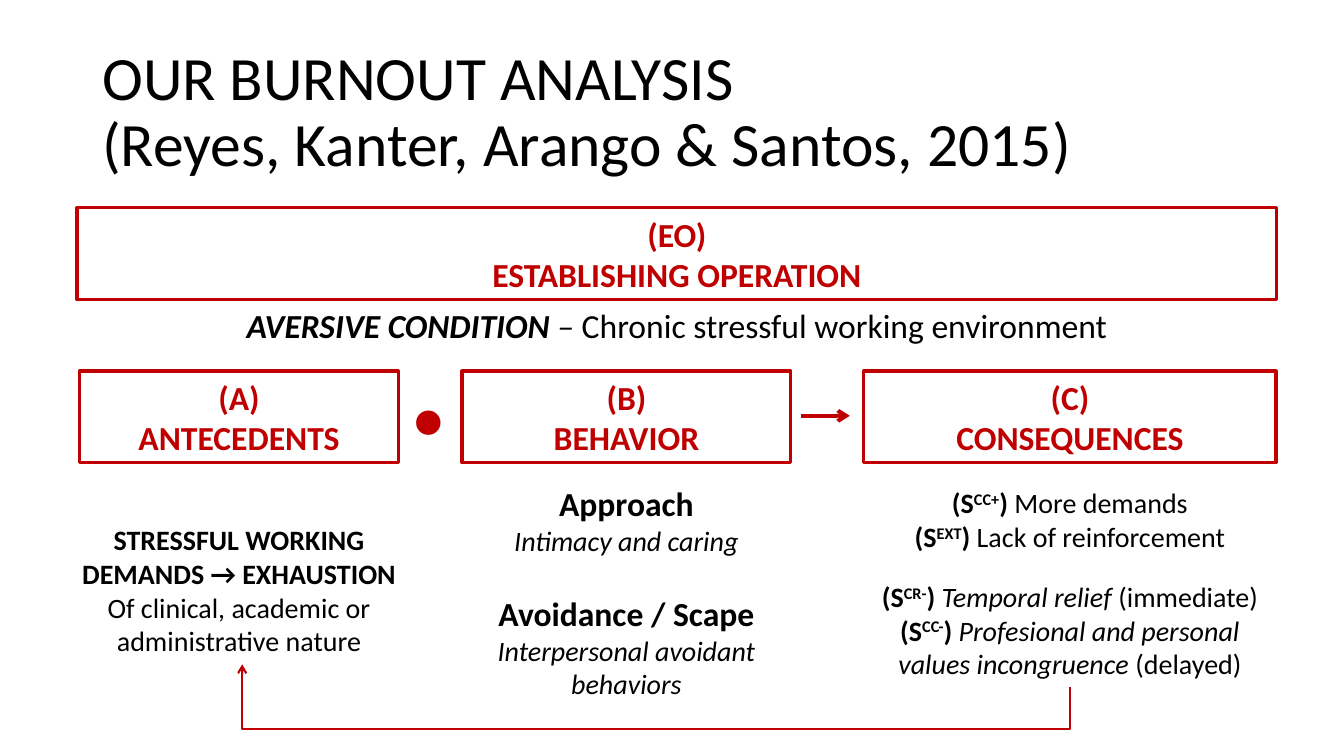
import dataclasses

import pptx
import pptx.dml.color
import pptx.enum.shapes
import pptx.enum.text
import pptx.oxml
import pptx.oxml.ns
import pptx.util

Pt = pptx.util.Pt
ANCHOR = pptx.enum.text.MSO_ANCHOR
ALIGN = pptx.enum.text.PP_ALIGN
CONNECTOR = pptx.enum.shapes.MSO_CONNECTOR


@dataclasses.dataclass(frozen=True)
class Theme:
    font: str = "Calibri"
    ink: str = "000000"
    accent: str = "C00000"
    title: float = 44
    heading: float = 24
    body: float = 20
    dot: float = 60
    frame_line: float = 2.25
    arrow_line: float = 2.75
    loop_line: float = 1.5


@dataclasses.dataclass(frozen=True)
class Box:
    left: float
    top: float
    width: float
    height: float

    def inner(self, dx, dy, width, height):
        return Box(self.left + dx, self.top + dy, width, height)

    def lengths(self):
        return [Pt(v) for v in (self.left, self.top, self.width, self.height)]


THEME = Theme()


def rgb(value):
    return pptx.dml.color.RGBColor.from_string(value)


# Text: a paragraph is (size, runs); a run is (text, marks), marks from b, i, ^
def write(frame, paragraphs, color=THEME.ink, align=ALIGN.CENTER,
          anchor=ANCHOR.TOP, spacing=None, grow=True):
    fit = pptx.enum.text.MSO_AUTO_SIZE
    settings = {"word_wrap": True, "vertical_anchor": anchor,
                "auto_size": fit.SHAPE_TO_FIT_TEXT if grow else fit.NONE}
    for name, value in settings.items():
        setattr(frame, name, value)
    for index, (size, runs) in enumerate(paragraphs):
        paragraph = frame.add_paragraph() if index else frame.paragraphs[0]
        paragraph.alignment = align
        paragraph.line_spacing = spacing
        for words, marks in runs:
            for number, line in enumerate(words.split("\n")):
                if number:
                    paragraph.add_line_break()
                run = paragraph.add_run()
                run.text = line
                formats = {"name": THEME.font, "size": Pt(size),
                           "bold": "b" in marks, "italic": "i" in marks}
                for name, value in formats.items():
                    setattr(run.font, name, value)
                run.font.color.rgb = rgb(color)
                if "^" in marks:
                    run.font._element.set("baseline", "30000")


def text(slide, box, paragraphs, **options):
    write(slide.shapes.add_textbox(*box.lengths()).text_frame, paragraphs, **options)


def framed_heading(slide, box, lines):
    frame = slide.shapes.add_shape(
        pptx.enum.shapes.MSO_SHAPE.RECTANGLE, *box.lengths())
    frame.shadow.inherit = False
    frame.fill.background()
    frame.line.color.rgb = rgb(THEME.accent)
    frame.line.width = Pt(THEME.frame_line)
    write(frame.text_frame, [(THEME.heading, [(line, "b")]) for line in lines],
          color=THEME.accent, anchor=ANCHOR.MIDDLE)


def arrow(slide, kind, start, end, width):
    connector = slide.shapes.add_connector(kind, *[Pt(v) for v in start + end])
    connector.line.color.rgb = rgb(THEME.accent)
    connector.line.width = Pt(width)
    tail = pptx.oxml.parse_xml(
        '<a:tailEnd %s type="arrow"/>' % pptx.oxml.ns.nsdecls("a"))
    connector.line._get_or_add_ln().append(tail)
    connector._element.spPr.append(pptx.oxml.parse_xml(
        "<a:effectLst %s/>" % pptx.oxml.ns.nsdecls("a")))
    return connector


# Title
def title(slide, box):
    words = "OUR BURNOUT ANALYSIS\n(Reyes, Kanter, Arango & Santos, 2015)"
    text(slide, box, [(THEME.title, [(words, "")])], align=ALIGN.LEFT,
         anchor=ANCHOR.MIDDLE, spacing=0.9, grow=False)


# Establishing operation band with its caption
def operation(slide, box):
    framed_heading(slide, box, ["(EO)", "ESTABLISHING OPERATION"])
    text(slide, box.inner(0, 66, box.width, 36), [(THEME.heading, [
        ("AVERSIVE CONDITION ", "bi"), ("– ", "i"),
        ("Chronic stressful working environment", "")])])


# Column: framed heading, then notes as (dy, height, overhang, paragraphs)
def column(slide, box, lines, notes):
    framed_heading(slide, box, lines)
    for dy, height, overhang, paragraphs in notes:
        area = box.inner(-overhang, dy, box.width + 2 * overhang, height)
        text(slide, area, paragraphs)


# Signs between the columns
def dot(slide, box):
    text(slide, box, [(THEME.dot, [("∙", "")])], color=THEME.accent)


def leads_to(slide, behavior, consequences):
    middle = behavior.top + 32
    arrow(slide, CONNECTOR.STRAIGHT,
          (behavior.left + behavior.width + 7, middle),
          (consequences.left - 10, middle), THEME.arrow_line)


# Feedback loop running below the columns; box spans its two ends
def feedback(slide, box, drop):
    center_x = box.left + box.width / 2
    center_y = box.top + box.height / 2
    half_w, half_h = box.height / 2, box.width / 2
    loop = arrow(slide, CONNECTOR.ELBOW,
                 (center_x + half_w, center_y - half_h),
                 (center_x - half_w, center_y + half_h), THEME.loop_line)
    properties = loop._element.spPr
    properties.find(pptx.oxml.ns.qn("a:xfrm")).set("rot", "5400000")
    geometry = properties.find(pptx.oxml.ns.qn("a:prstGeom"))
    for guides in list(geometry):
        geometry.remove(guides)
    bend = round(-drop / box.height * 100000)
    geometry.append(pptx.oxml.parse_xml(
        '<a:avLst %s><a:gd name="adj1" fmla="val %d"/></a:avLst>'
        % (pptx.oxml.ns.nsdecls("a"), bend)))


def stimulus(kind, *rest):
    return THEME.body, [("(S", "b"), (kind, "b^"), (") ", "b"), *rest]


def response(name, example):
    return [(THEME.heading, [(name, "b")]), (THEME.body, [(example, "i")])]


def main():
    deck = pptx.Presentation()
    deck.slide_width, deck.slide_height = Pt(960), Pt(540)
    slide = deck.slides.add_slide(deck.slide_layouts[6])

    row_top, frame_height = 265, 65.5
    antecedents = Box(57, row_top, 227.5, frame_height)
    behavior = Box(330, row_top, 235, frame_height)
    consequences = Box(617, row_top, 294.5, frame_height)

    title(slide, Box(66, 28.8, 828, 104.4))
    operation(slide, Box(55, 148.5, 857, frame_height))
    column(slide, antecedents, ["(A)", "ANTECEDENTS"], [
        (105, 104.5, 20, [
            (THEME.body, [("STRESSFUL WORKING DEMANDS → EXHAUSTION", "b")]),
            (THEME.body, [("Of clinical, academic or", "")]),
            (THEME.body, [("administrative nature", "")])])])
    column(slide, behavior, ["(B)", "BEHAVIOR"], [
        (76.5, 60.5, -3.75, response("Approach", "Intimacy and caring")),
        (155, 85, -3.75,
         response("Avoidance / Scape", "Interpersonal avoidant behaviors"))])
    column(slide, consequences, ["(C)", "CONSEQUENCES"], [
        (78.5, 55.5, 0, [
            stimulus("CC+", ("More demands", "")),
            stimulus("EXT", ("Lack of reinforcement", ""))]),
        (145.5, 80, 0, [
            stimulus("CR-", ("Temporal relief", "i"), (" (immediate)", "")),
            stimulus("CC-", ("Profesional and personal values incongruence ", "i"),
                     ("(delayed)", ""))])])
    dot(slide, Box(227.5, 257.8, 157.5, 80))
    leads_to(slide, behavior, consequences)
    feedback(slide, Box(173, 474.5, 591.5, 16), 30.5)

    deck.save("out.pptx")


if __name__ == "__main__":
    main()
